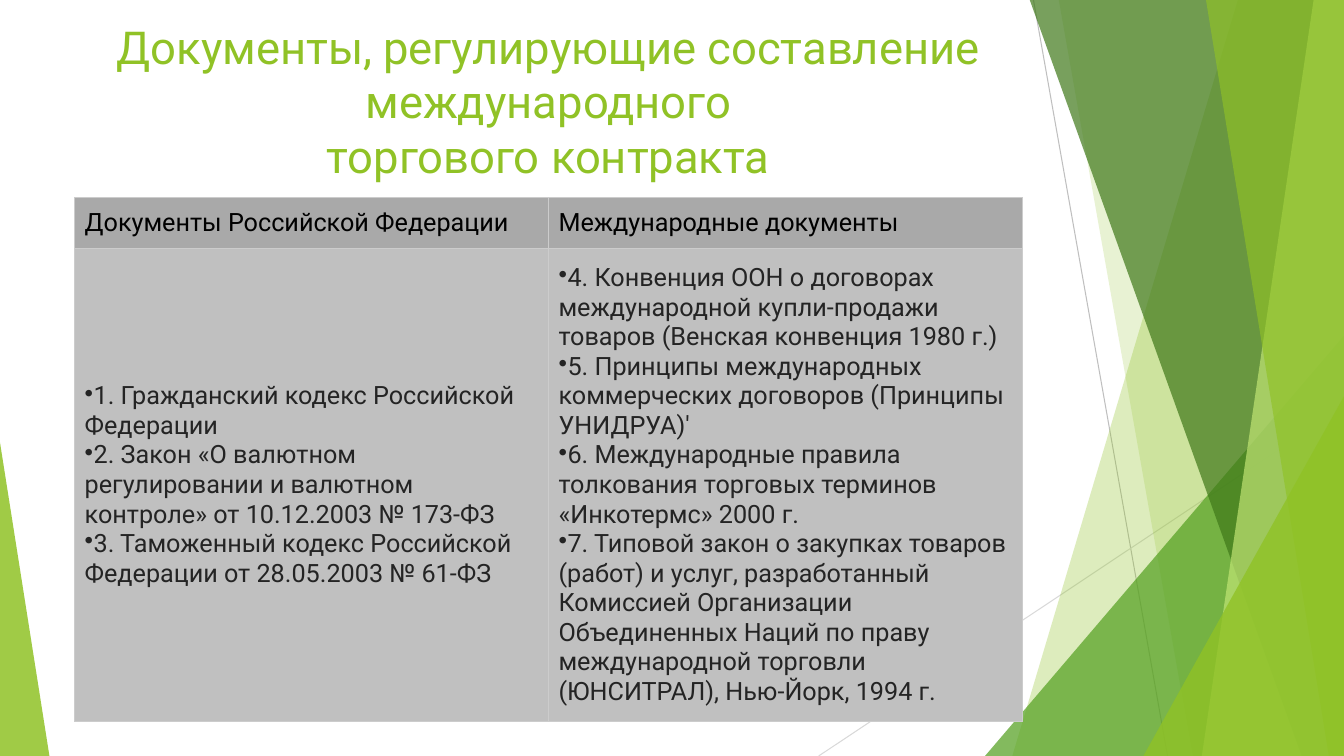
"""Slide listing the documents that govern an international trade contract."""
import pptx
import pptx.dml.color
import pptx.enum.shapes
import pptx.enum.text
import pptx.oxml.ns
import pptx.oxml.xmlchemy
import pptx.util
from pptx.util import Inches

COLORS = {
    "green": "90C226", "leaf": "54A021", "forest": "3F7819", "lime": "C0E474",
    "steep_line": "BFBFBF", "flat_line": "D9D9D9", "border": "CCCCCC",
    "head_fill": "A9A9A9", "body_fill": "C0C0C0",
    "head_text": "000000", "body_text": "242424",
}
FONT = "Roboto"
WIDTH, HEIGHT, TOP = 13.33, 7.5, -0.01

TITLE = "Документы, регулирующие составление международного\nторгового контракта"
HEADS = ["Документы Российской Федерации", "Международные документы"]
DOCUMENTS = [
    [
        "1. Гражданский кодекс Российской Федерации",
        "2. Закон «О валютном регулировании и валютном контроле» от 10.12.2003 № 173-ФЗ",
        "3. Таможенный кодекс Российской Федерации от 28.05.2003 № 61-ФЗ",
    ],
    [
        "4. Конвенция ООН о договорах международной купли-продажи товаров (Венская конвенция 1980 г.)",
        "5. Принципы международных коммерческих договоров (Принципы УНИДРУА)'",
        "6. Международные правила толкования торговых терминов «Инкотермс» 2000 г.",
        "7. Типовой закон о закупках товаров (работ) и услуг, разработанный Комиссией "
        "Организации Объединенных Наций по праву международной торговли (ЮНСИТРАЛ), "
        "Нью-Йорк, 1994 г.",
    ],
]


def rgb(name):
    return pptx.dml.color.RGBColor.from_string(COLORS[name])


def add_xml(parent, tag, **attributes):
    child = pptx.oxml.xmlchemy.OxmlElement(tag)
    for key, value in attributes.items():
        child.set(key, str(value))
    parent.append(child)
    return child


def write(para, text, size=18, color="body_text", align=None, bullet=None):
    para.alignment = align
    if bullet:
        properties = para._p.get_or_add_pPr()
        properties.set("marL", "0")
        properties.set("indent", "0")
        add_xml(properties, "a:buChar", char=bullet)
    for index, line in enumerate(text.split("\n")):
        if index:
            para.add_line_break()
        span = para.add_run()
        span.text = line
        span.font.name = FONT
        span.font.size = pptx.util.Pt(size)
        span.font.color.rgb = rgb(color)


class ContractSlide:
    def __init__(self, page):
        self.page = page
        self.shapes = page.shapes
        self.line_width = pptx.util.Pt(0.75)

    def line(self, start, end, color):
        connector = self.shapes.add_connector(
            pptx.enum.shapes.MSO_CONNECTOR.STRAIGHT,
            *(Inches(value) for value in (*start, *end)))
        connector.line.color.rgb = rgb(color)
        connector.line.width = self.line_width
        add_xml(connector._element.spPr, "a:effectLst")

    def paint(self, shape, color, opacity):
        shape.shadow.inherit = False
        shape.line.fill.background()
        shape.fill.solid()
        shape.fill.fore_color.rgb = rgb(color)
        tint = shape._element.spPr.find(".//" + pptx.oxml.ns.qn("a:srgbClr"))
        add_xml(tint, "a:alpha", val=opacity * 1000)

    def band(self, top_left, bottom_left, color, opacity):
        corners = [(top_left, TOP), (WIDTH, TOP), (WIDTH, HEIGHT), (bottom_left, HEIGHT)]
        points = [(Inches(x), Inches(y)) for x, y in corners]
        builder = self.shapes.build_freeform(*points[0])
        builder.add_line_segments(points[1:], close=True)
        self.paint(builder.convert_to_shape(), color, opacity)

    def triangle(self, left, top, width, apex, color, opacity):
        shape = self.shapes.add_shape(
            pptx.enum.shapes.MSO_SHAPE.ISOSCELES_TRIANGLE,
            Inches(left), Inches(top), Inches(width), Inches(HEIGHT - top))
        shape.adjustments[0] = apex
        self.paint(shape, color, opacity)

    def title(self, text, left, top, width, height):
        box = self.shapes.add_textbox(
            Inches(left), Inches(top), Inches(width), Inches(height))
        frame = box.text_frame
        frame.word_wrap = True
        frame.vertical_anchor = pptx.enum.text.MSO_ANCHOR.TOP
        write(frame.paragraphs[0], text, size=32.4, color="green",
              align=pptx.enum.text.PP_ALIGN.CENTER)

    def cell(self, cell, lines, fill, color, bullet=None):
        cell.margin_left = cell.margin_right = Inches(0.1)
        cell.margin_top = cell.margin_bottom = Inches(0.1)
        cell.vertical_anchor = pptx.enum.text.MSO_ANCHOR.MIDDLE
        properties = cell._tc.get_or_add_tcPr()
        for side in ("a:lnL", "a:lnR", "a:lnT", "a:lnB"):
            edge = add_xml(properties, side, w=int(self.line_width))
            add_xml(add_xml(edge, "a:solidFill"), "a:srgbClr", val=COLORS["border"])
        cell.fill.solid()
        cell.fill.fore_color.rgb = rgb(fill)
        frame = cell.text_frame
        for index, line in enumerate(lines):
            para = frame.add_paragraph() if index else frame.paragraphs[0]
            write(para, line, color=color, bullet=bullet)

    def table(self, left, top, column_width, row_heights):
        grid = self.shapes.add_table(
            len(row_heights), len(HEADS), Inches(left), Inches(top),
            Inches(column_width * len(HEADS)), Inches(sum(row_heights))).table
        grid.first_row = grid.horz_banding = False
        for row, height in zip(grid.rows, row_heights):
            row.height = Inches(height)
        for index, (head, documents) in enumerate(zip(HEADS, DOCUMENTS)):
            grid.columns[index].width = Inches(column_width)
            self.cell(grid.cell(0, index), [head], "head_fill", "head_text")
            self.cell(grid.cell(1, index), documents, "body_fill", "body_text", "•")


def main():
    deck = pptx.Presentation()
    deck.slide_width, deck.slide_height = Inches(WIDTH), Inches(HEIGHT)
    slide = ContractSlide(deck.slides.add_slide(deck.slide_layouts[6]))

    slide.line((10.25, 0), (11.58, HEIGHT), "steep_line")
    slide.line((WIDTH, 4.03), (8.12, HEIGHT), "flat_line")
    slide.band(12.28, 10.04, "green", 30)
    slide.band(10.5, 11.83, "green", 20)
    slide.triangle(9.77, 3.33, 3.56, 1, "leaf", 72)
    slide.band(10.21, 12.91, "forest", 70)
    slide.band(13.03, 11.92, "lime", 70)
    slide.band(11.96, 13.18, "green", 65)
    slide.triangle(11.34, 3.93, 1.99, 1, "green", 80)
    slide.triangle(0, 4.39, 0.49, 0, "green", 85)

    slide.title(TITLE, 0.74, 0.14, 9.4, 1.63)
    slide.table(0.74, 1.96, 4.7, [0.5, 4.61])
    deck.save("out.pptx")


if __name__ == "__main__":
    main()
